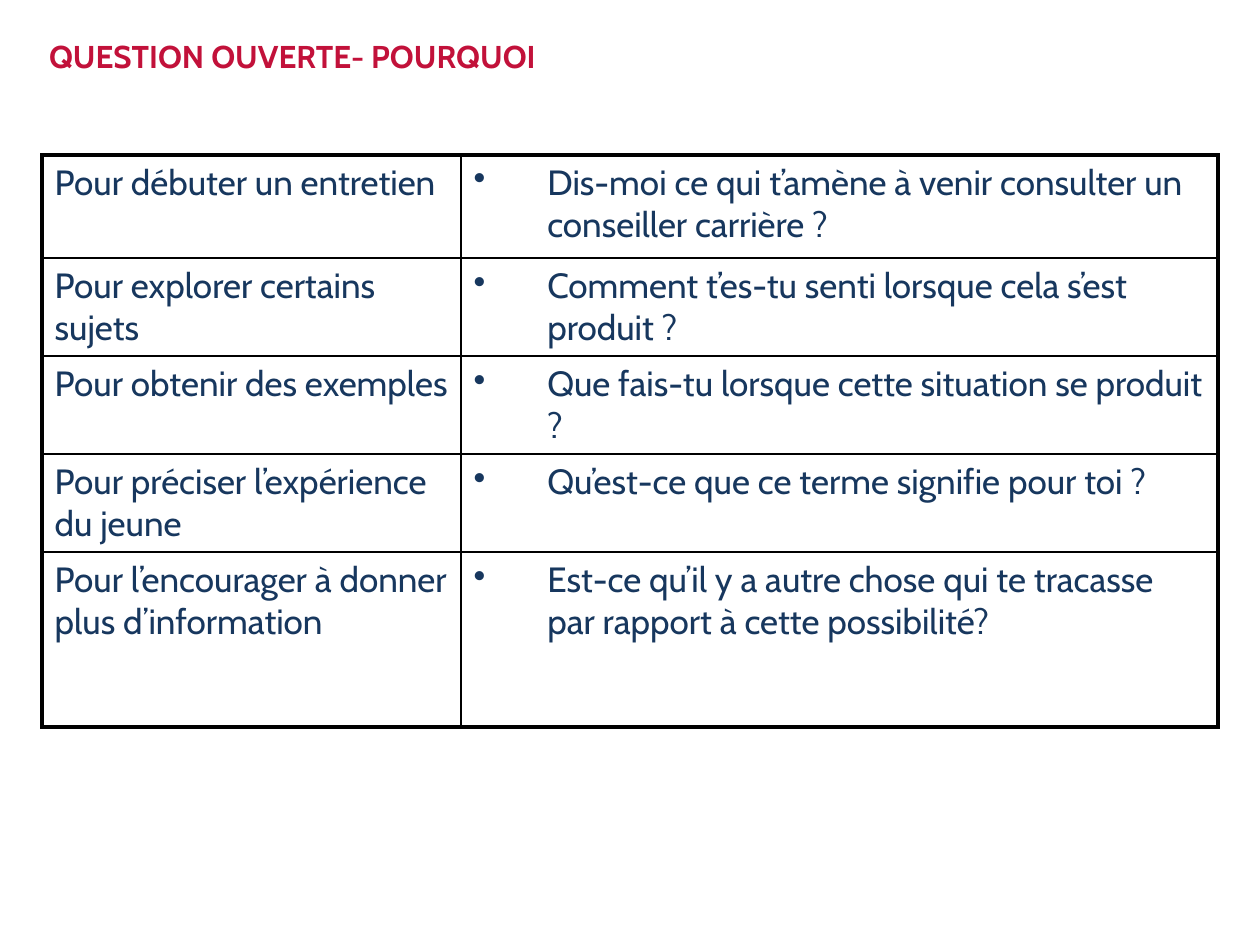
from dataclasses import dataclass

from lxml.etree import SubElement
from pptx import Presentation
from pptx.dml.color import RGBColor
from pptx.enum.text import MSO_ANCHOR, MSO_AUTO_SIZE, PP_ALIGN
from pptx.oxml import parse_xml
from pptx.oxml.ns import nsdecls, qn
from pptx.slide import Slide
from pptx.util import Pt

EXCHANGES = [
    ("Pour débuter un entretien",
     "Dis-moi ce qui t’amène à venir consulter un conseiller carrière ?"),
    ("Pour explorer certains sujets",
     "Comment t’es-tu senti lorsque cela s’est produit ?"),
    ("Pour obtenir des exemples",
     "Que fais-tu lorsque cette situation se produit ?"),
    ("Pour préciser l’expérience du jeune",
     "Qu’est-ce que ce terme signifie pour toi ?"),
    ("Pour l’encourager à donner plus d’information",
     "Est-ce qu’il y a autre chose qui te tracasse par rapport à cette possibilité?"),
]
COLUMN_WIDTHS = [239.5, 432.5]
ROW_HEIGHTS = [59, 56, 56, 56, 100]


def rgb(value):
    return RGBColor.from_string(value)


def write(frame, text, font, size, color, bold=False, bullet=None, indent=42):
    paragraph = frame.paragraphs[0]
    paragraph.alignment = PP_ALIGN.LEFT
    if bullet:
        properties = paragraph._p.get_or_add_pPr()
        properties.set("marL", str(Pt(indent)))
        properties.set("indent", str(-Pt(indent)))
        SubElement(properties, qn("a:buChar")).set("char", bullet)
    run = paragraph.add_run()
    run.text = text
    run.font.name = font
    run.font.size = Pt(size)
    run.font.bold = bold
    run.font.color.rgb = rgb(color)


@dataclass
class Deck:
    slide: Slide
    font: str = "Cabin"
    heading: str = "C2113A"
    ink: str = "17375E"
    border: str = "000000"
    outer: float = 2.25
    inner: float = 1

    def title(self, text, left, top, width, height):
        title = self.slide.shapes.title
        title.left, title.top = Pt(left), Pt(top)
        title.width, title.height = Pt(width), Pt(height)
        frame = title.text_frame
        frame.margin_left = Pt(4)
        frame.margin_top = frame.margin_right = frame.margin_bottom = 0
        frame.vertical_anchor = MSO_ANCHOR.TOP
        frame.word_wrap = True
        frame.auto_size = MSO_AUTO_SIZE.NONE
        write(frame, text, self.font, 18, self.heading, bold=True)

    def edges(self, cell, outer_sides):
        properties = cell._tc.get_or_add_tcPr()
        for position, side in enumerate("LRTB"):
            weight = self.outer if side in outer_sides else self.inner
            properties.insert(position, parse_xml(
                f'<a:ln{side} {nsdecls("a")} w="{Pt(weight)}"><a:solidFill>'
                f'<a:srgbClr val="{self.border}"/></a:solidFill></a:ln{side}>'))

    def table(self, rows, left, top, widths, heights):
        table = self.slide.shapes.add_table(
            len(rows), len(widths), Pt(left), Pt(top),
            Pt(sum(widths)), Pt(sum(heights))).table
        table.first_row = table.horz_banding = False
        for column, width in zip(table.columns, widths):
            column.width = Pt(width)
        for row, height in zip(table.rows, heights):
            row.height = Pt(height)
        for r, texts in enumerate(rows):
            for c, text in enumerate(texts):
                cell = table.cell(r, c)
                cell.fill.background()
                sides = "R" if c else "L"
                if r == 0:
                    sides += "T"
                if r == len(rows) - 1:
                    sides += "B"
                self.edges(cell, sides)
                write(cell.text_frame, text, self.font, 20, self.ink,
                      bullet="•" if c else None)


def main():
    presentation = Presentation()
    presentation.slide_width, presentation.slide_height = Pt(720), Pt(540)
    deck = Deck(presentation.slides.add_slide(presentation.slide_layouts[5]))
    deck.title("QUESTION OUVERTE- POURQUOI", 24, 21, 672, 55)
    deck.table(EXCHANGES, 24, 88.5, COLUMN_WIDTHS, ROW_HEIGHTS)
    presentation.save("out.pptx")


if __name__ == "__main__":
    main()
